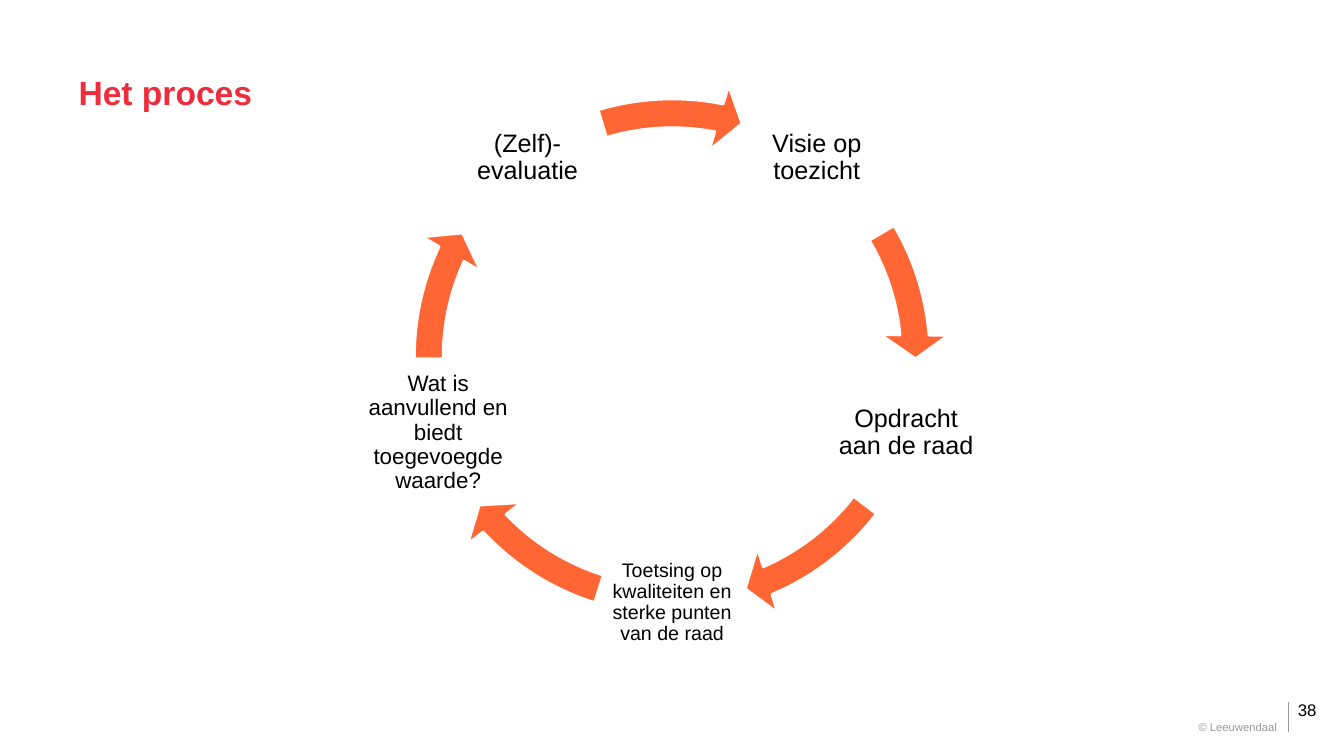
from math import cos, radians, sin

from lxml.etree import SubElement
from pptx import Presentation
from pptx.dml.color import RGBColor
from pptx.enum.shapes import MSO_CONNECTOR, MSO_SHAPE
from pptx.enum.text import MSO_ANCHOR as Anchor, PP_ALIGN as Align
from pptx.oxml.ns import qn
from pptx.util import Cm, Pt


def color(hex_code):
    return RGBColor.from_string(hex_code)


def add_text(text, left, top, width, height, size=18, ink="000000", bold=False,
             align=Align.LEFT, anchor=Anchor.TOP, inset=(0.25, 0), spacing=1.0):
    box = slide.shapes.add_textbox(Cm(left), Cm(top), Cm(width), Cm(height))
    frame = box.text_frame
    frame.word_wrap = True
    frame.vertical_anchor = anchor
    frame.margin_left = frame.margin_right = Cm(inset[0])
    frame.margin_top = frame.margin_bottom = Cm(inset[1])
    paragraph = frame.paragraphs[0]
    paragraph.alignment = align
    paragraph.line_spacing = spacing
    run = paragraph.add_run()
    run.text = text
    run.font.name = "Arial"
    run.font.size = Pt(size)
    run.font.bold = bold
    run.font.color.rgb = color(ink)


prs = Presentation()
prs.slide_width, prs.slide_height = Cm(33.87), Cm(19.05)
slide = prs.slides.add_slide(prs.slide_layouts[6])

# Title
add_text("Het proces", 1.73, 1.68, 31.04, 1.27, size=24, ink="ED2C3C", bold=True,
         anchor=Anchor.MIDDLE, inset=(0.25, 0.13))

# Cycle: step text, font size, inset, start and end angle of the arrow after it
steps = [
    ("Visie op toezicht", 18, 0.08, 329.44, 354.88),
    ("Opdracht aan de raad", 18, 0.08, 37.56, 66.91),
    ("Toetsing op kwaliteiten en sterke punten van de raad", 14, 0.05, 107.5, 136.84),
    ("Wat is aanvullend en biedt toegevoegde waarde?", 16, 0.05, 179.52, 204.96),
    ("(Zelf)-evaluatie", 18, 0.08, 253.31, 281.09),
]
center_x, center_y, radius = 16.94, 8.99, 6.2
step_size, ring_size = 3.73, 13.97
DEGREE = 0.6  # one degree in adjustment units

for index, (step, size, inset, start, end) in enumerate(steps):
    angle = radians(-54 + index * 360 / len(steps))
    add_text(step,
             center_x + radius * cos(angle) - step_size / 2,
             center_y + radius * sin(angle) - step_size / 2,
             step_size, step_size, size=size, align=Align.CENTER,
             anchor=Anchor.MIDDLE, inset=(inset, inset), spacing=0.9)

    arrow = slide.shapes.add_shape(
        MSO_SHAPE.CIRCULAR_ARROW, Cm(center_x - ring_size / 2),
        Cm(center_y - ring_size / 2), Cm(ring_size), Cm(ring_size))
    shape_values = (0.052, 5.6 * DEGREE, end * DEGREE, start * DEGREE, 0.061)
    for position, value in enumerate(shape_values):
        arrow.adjustments[position] = value
    arrow.shadow.inherit = False
    arrow.fill.solid()
    arrow.fill.fore_color.rgb = color("FF6633")
    arrow.line.color.rgb = color("FFFFFF")
    arrow.line.width = Pt(2)

# Footer
add_text("38", 32.46, 17.63, 1.75, 0.5, size=12)
divider = slide.shapes.add_connector(
    MSO_CONNECTOR.STRAIGHT, Cm(32.46), Cm(17.7), Cm(32.46), Cm(18.44))
divider.line.color.rgb = color("999999")
divider.line.width = Pt(0.75)
SubElement(divider._element.spPr, qn("a:effectLst"))
add_text("© Leeuwendaal", 28.32, 18.16, 4.11, 0.33, size=8, ink="999999",
         align=Align.RIGHT)

prs.save("out.pptx")
